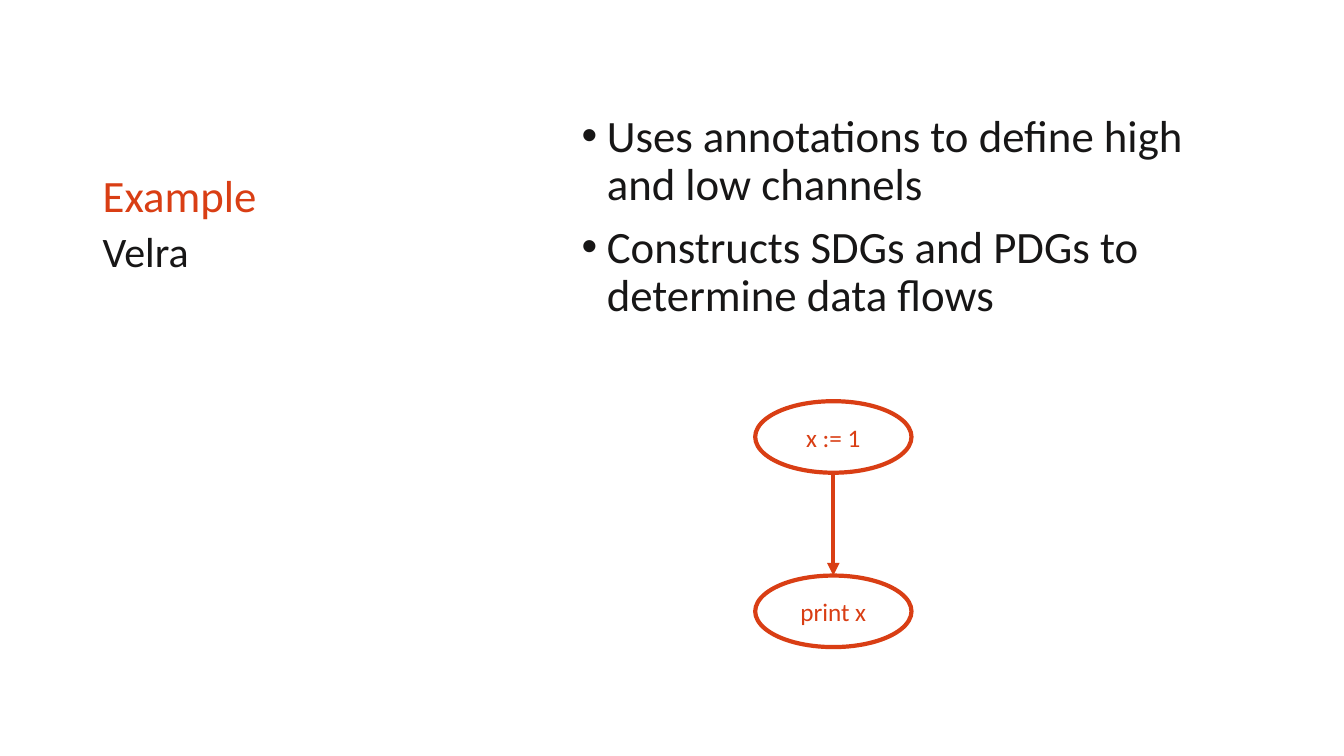
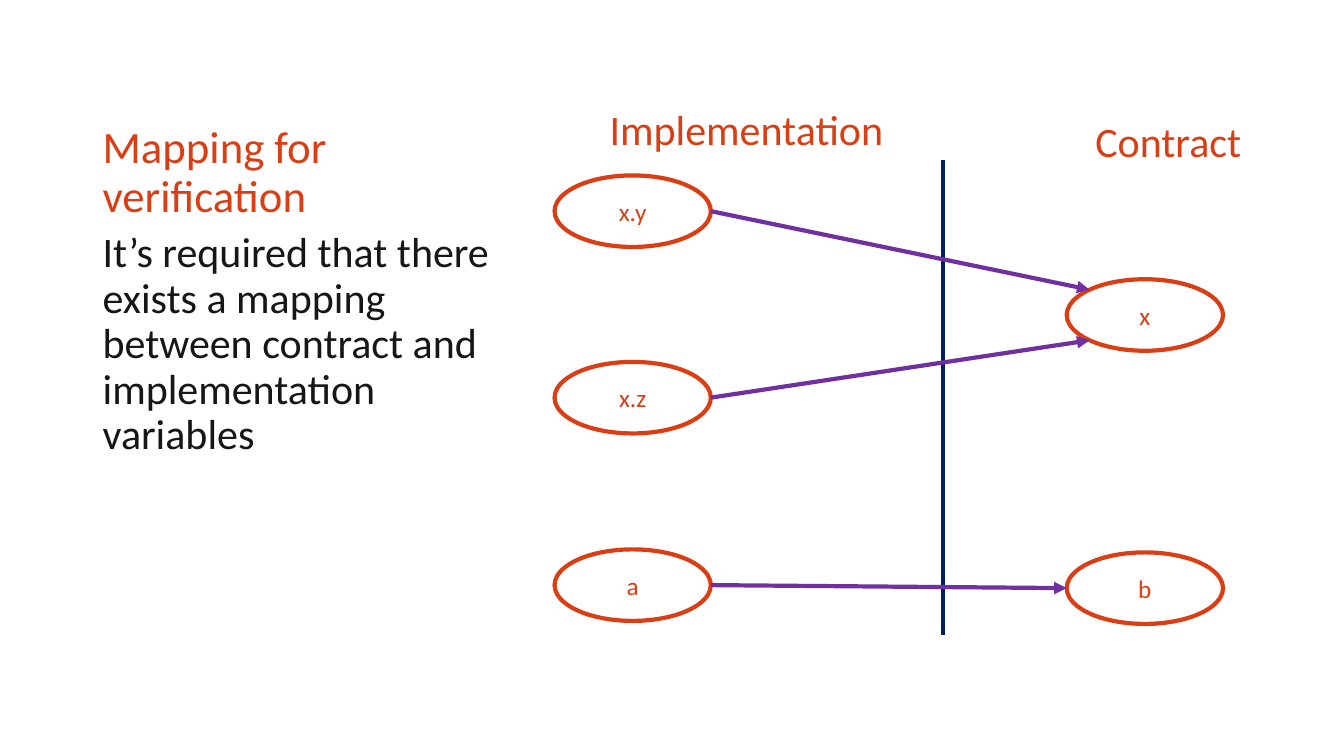
from dataclasses import dataclass
from math import cos, radians, sin

from lxml.etree import SubElement
from pptx import Presentation
from pptx.dml.color import RGBColor
from pptx.enum.shapes import MSO_CONNECTOR, MSO_SHAPE
from pptx.enum.text import MSO_ANCHOR, PP_ALIGN
from pptx.oxml.ns import qn
from pptx.util import Inches, Pt


@dataclass(frozen=True)
class Theme:
    font: str = "Calibri"
    accent: RGBColor = RGBColor(0xD9, 0x3E, 0x14)
    ink: RGBColor = RGBColor(0x17, 0x16, 0x16)
    divider: RGBColor = RGBColor(0x00, 0x20, 0x60)
    mapping: RGBColor = RGBColor(0x70, 0x30, 0xA0)
    title_size: int = 32
    body_size: int = 30
    node_size: int = 18
    stroke: int = 3


THEME = Theme()
NODE_WIDTH, NODE_HEIGHT = 1.55, 0.71
TOP, RIGHT, BOTTOM, LEFT = 270, 0, 90, 180
UPPER_LEFT, LOWER_LEFT = 225, 135


def write(frame, *paragraphs, size, color=THEME.accent, align=PP_ALIGN.LEFT,
          anchor=MSO_ANCHOR.TOP, wrap=True, line_spacing=1.0, space_before=0,
          bullet=False):
    frame.word_wrap = wrap
    frame.vertical_anchor = anchor
    for index, content in enumerate(paragraphs):
        paragraph = frame.paragraphs[0] if index == 0 else frame.add_paragraph()
        paragraph.alignment = align
        paragraph.line_spacing = line_spacing
        paragraph.space_before = Pt(space_before)
        if bullet:
            properties = paragraph._p.get_or_add_pPr()
            properties.set("marL", str(Inches(0.25)))
            properties.set("indent", str(-Inches(0.25)))
            SubElement(properties, qn("a:buFont")).set("typeface", "Arial")
            SubElement(properties, qn("a:buChar")).set("char", "•")
        run = paragraph.add_run()
        run.text = content
        run.font.name = THEME.font
        run.font.size = Pt(size)
        run.font.color.rgb = color


def add_text(slide, box, *paragraphs, **style):
    label = slide.shapes.add_textbox(*map(Inches, box))
    write(label.text_frame, *paragraphs, **style)


def add_line(slide, start, end, color, arrow=False):
    line = slide.shapes.add_connector(
        MSO_CONNECTOR.STRAIGHT, *map(Inches, (*start, *end)))
    line.line.color.rgb = color
    line.line.width = Pt(THEME.stroke)
    if arrow:
        SubElement(line.line._get_or_add_ln(), qn("a:tailEnd")).set("type", "triangle")
    SubElement(line._element.spPr, qn("a:effectLst"))


def add_node(slide, corner, name):
    node = slide.shapes.add_shape(
        MSO_SHAPE.OVAL, *map(Inches, (*corner, NODE_WIDTH, NODE_HEIGHT)))
    node.shadow.inherit = False
    node.fill.background()
    node.line.color.rgb = THEME.accent
    node.line.width = Pt(THEME.stroke)
    write(node.text_frame, name, size=THEME.node_size,
          align=PP_ALIGN.CENTER, anchor=MSO_ANCHOR.MIDDLE)


def rim(corner, angle):
    left, top = corner
    return (left + NODE_WIDTH / 2 * (1 + cos(radians(angle))),
            top + NODE_HEIGHT / 2 * (1 + sin(radians(angle))))


def add_graph(slide, origin, nodes, edges, color):
    corners = {name: (origin[0] + x, origin[1] + y) for name, (x, y) in nodes.items()}
    for name, corner in corners.items():
        add_node(slide, corner, name)
    for source, exit_angle, target, entry_angle in edges:
        add_line(slide, rim(corners[source], exit_angle),
                 rim(corners[target], entry_angle), color, arrow=True)


def add_sidebar(slide, box, title, description):
    left, top, width, height = box
    title_height = 1.75
    add_text(slide, (left, top, width, title_height), title, size=THEME.title_size,
             anchor=MSO_ANCHOR.BOTTOM, line_spacing=0.9)
    add_text(slide, (left, top + title_height, width, height - title_height),
             description, size=THEME.body_size, color=THEME.ink,
             line_spacing=0.9, space_before=10)


def add_topic_slide(deck, title, description):
    slide = deck.slides.add_slide(deck.slide_layouts[6])
    add_sidebar(slide, (0.92, 0.5, 4.3, 5.92), title, description)
    return slide


def add_example(slide, box):
    left, top, width, height = box
    add_text(slide, box,
             "Uses annotations to define high and low channels",
             "Constructs SDGs and PDGs to determine data flows",
             size=THEME.title_size, color=THEME.ink, line_spacing=0.9,
             space_before=10, bullet=True)
    add_graph(slide, (left + 1.82, top + 2.9),
              {"x := 1": (0, 0), "print x": (0, 1.73)},
              [("x := 1", BOTTOM, "print x", TOP)], THEME.accent)


def add_mapping(slide, origin):
    left, top = origin
    contract = 5.08
    add_line(slide, (left + 3.85, top + 0.61), (left + 3.85, top + 5.32), THEME.divider)
    add_graph(slide, (left, top + 0.76),
              {"x.y": (0, 0), "x.z": (0, 1.85), "a": (0, 3.71),
               "x": (contract, 1.03), "b": (contract, 3.74)},
              [("x.y", RIGHT, "x", UPPER_LEFT),
               ("x.z", RIGHT, "x", LOWER_LEFT),
               ("a", RIGHT, "b", LEFT)], THEME.mapping)
    for heading, x, y in (("Implementation", 0.42, 0), ("Contract", 3.97, 0.12)):
        add_text(slide, (left + x, top + y, 2.94, 0.61), heading,
                 size=THEME.body_size, align=PP_ALIGN.RIGHT, wrap=False)


def main():
    deck = Presentation()
    deck.slide_width, deck.slide_height = Inches(13.33), Inches(7.5)
    example = add_topic_slide(deck, "Example", "Velra")
    add_example(example, (5.67, 1.08, 6.75, 5.33))
    mapping = add_topic_slide(
        deck, "Mapping for verification",
        "It’s required that there exists a mapping between contract and "
        "implementation variables")
    add_mapping(mapping, (5.5, 0.98))
    deck.save("out.pptx")


if __name__ == "__main__":
    main()
